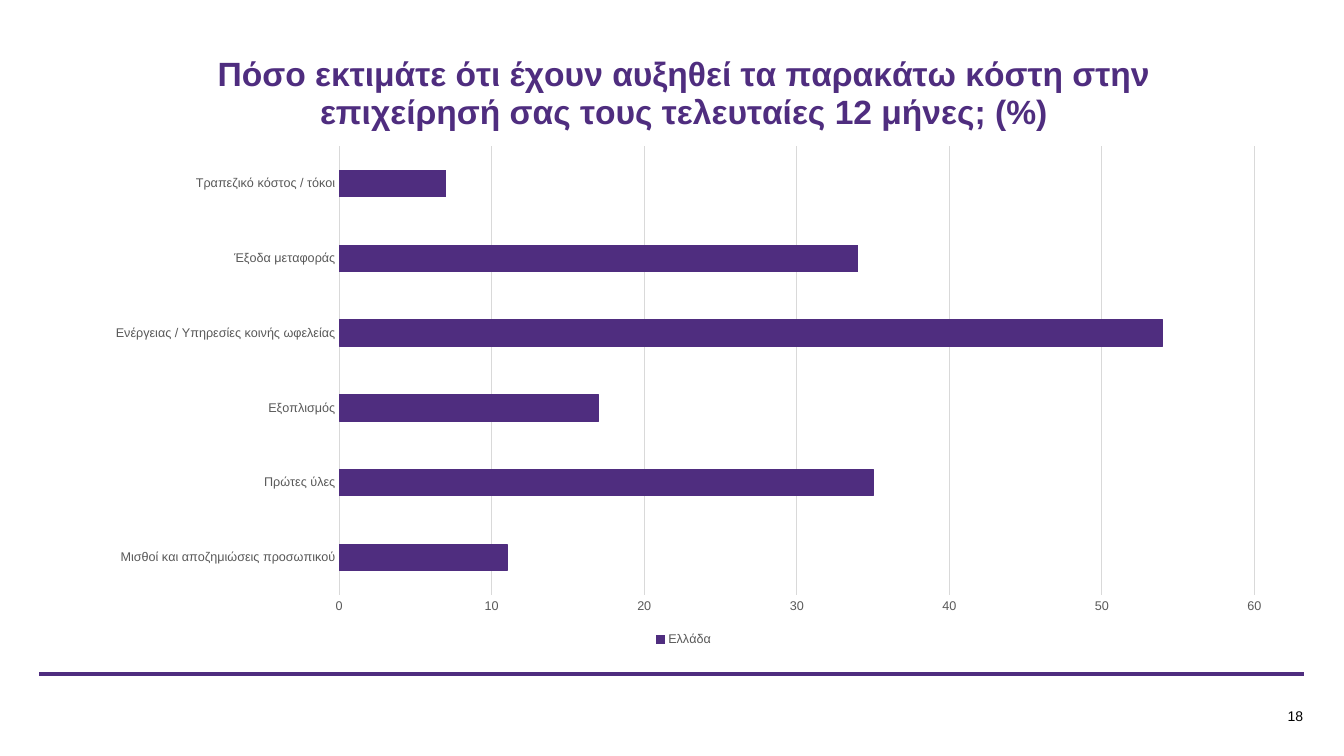
from typing import Any, NamedTuple

import lxml.etree
import pptx
import pptx.chart.data
import pptx.dml.color
import pptx.enum.chart
import pptx.enum.shapes
import pptx.enum.text
import pptx.oxml.ns
import pptx.util

Pt = pptx.util.Pt

COLORS = {
    "purple": "4F2D7F",
    "label": "595959",
    "grid": "D9D9D9",
    "black": "000000",
}
FONT_NAME = "Arial"
TITLE = (
    "Πόσο εκτιμάτε ότι έχουν αυξηθεί τα παρακάτω κόστη στην "
    "επιχείρησή σας τους τελευταίες 12 μήνες; (%)"
)
PLOT_LAYOUT = {"x": 0.21, "y": 0.19, "w": 0.77, "h": 0.72}


class Cost(NamedTuple):
    name: str
    increase: int


COSTS = [
    Cost("Μισθοί και αποζημιώσεις προσωπικού", 11),
    Cost("Πρώτες ύλες", 35),
    Cost("Εξοπλισμός", 17),
    Cost("Ενέργειας / Υπηρεσίες κοινής ωφελείας", 54),
    Cost("Έξοδα μεταφοράς", 34),
    Cost("Τραπεζικό κόστος / τόκοι", 7),
]


def rgb(color: str) -> pptx.dml.color.RGBColor:
    return pptx.dml.color.RGBColor.from_string(COLORS[color])


def set_attributes(target: Any, values: dict[str, Any]) -> None:
    for name, value in values.items():
        setattr(target, name, value)


def format_font(font: Any, size: float, color: str, bold: bool = False) -> None:
    set_attributes(font, {"name": FONT_NAME, "size": Pt(size), "bold": bold})
    font.color.rgb = rgb(color)


def format_line(line: Any, color: str, width: float) -> None:
    line.color.rgb = rgb(color)
    line.width = Pt(width)


def place_plot(chart: Any) -> None:
    """Fix the inner plot area as fractions of the chart frame."""
    qn = pptx.oxml.ns.qn
    plot_area = chart.plots[0]._element.getparent()
    for automatic in plot_area.findall(qn("c:layout")):
        plot_area.remove(automatic)
    layout = lxml.etree.Element(qn("c:layout"))
    manual = lxml.etree.SubElement(layout, qn("c:manualLayout"))
    settings = {"layoutTarget": "inner", "xMode": "edge", "yMode": "edge"} | PLOT_LAYOUT
    for tag, value in settings.items():
        lxml.etree.SubElement(manual, qn(f"c:{tag}")).set("val", str(value))
    plot_area.insert(0, layout)


def format_axes(chart: Any) -> None:
    no_tick = pptx.enum.chart.XL_TICK_MARK.NONE
    for axis in (chart.category_axis, chart.value_axis):
        set_attributes(axis, {"major_tick_mark": no_tick, "minor_tick_mark": no_tick})
        format_font(axis.tick_labels.font, 9, "label")
    chart.category_axis.has_major_gridlines = False
    format_line(chart.category_axis.format.line, "grid", 0.75)

    value_axis = chart.value_axis
    set_attributes(
        value_axis,
        {
            "minimum_scale": 0,
            "maximum_scale": 60,
            "major_unit": 10,
            "has_major_gridlines": True,
        },
    )
    set_attributes(
        value_axis.tick_labels,
        {"number_format": "###0", "number_format_is_linked": False},
    )
    format_line(value_axis.major_gridlines.format.line, "grid", 0.75)
    value_axis.format.line.fill.background()


def add_cost_chart(slide: Any) -> None:
    data = pptx.chart.data.CategoryChartData(number_format="###0")
    data.categories = [cost.name for cost in COSTS]
    data.add_series("Ελλάδα", [cost.increase for cost in COSTS])
    chart = slide.shapes.add_chart(
        pptx.enum.chart.XL_CHART_TYPE.BAR_CLUSTERED,
        Pt(64), Pt(20), Pt(849), Pt(445), data,
    ).chart
    format_font(chart.font, 10, "black")
    set_attributes(chart, {"has_title": True, "has_legend": True})

    title_frame = chart.chart_title.text_frame
    title_frame.text = TITLE
    format_font(title_frame.paragraphs[0].runs[0].font, 24, "purple", bold=True)
    chart.chart_title.include_in_layout = False

    set_attributes(
        chart.legend,
        {
            "position": pptx.enum.chart.XL_LEGEND_POSITION.BOTTOM,
            "include_in_layout": False,
        },
    )
    format_font(chart.legend.font, 9, "label")

    plot = chart.plots[0]
    set_attributes(plot, {"gap_width": 182, "vary_by_categories": False})
    series = plot.series[0]
    series.invert_if_negative = False
    series.format.fill.solid()
    series.format.fill.fore_color.rgb = rgb("purple")
    format_line(series.format.line, "purple", 0.75)
    format_axes(chart)
    place_plot(chart)


def add_footer_line(slide: Any) -> None:
    connector = slide.shapes.add_connector(
        pptx.enum.shapes.MSO_CONNECTOR.STRAIGHT,
        Pt(28), Pt(481.7), Pt(931.7), Pt(481.7),
    )
    format_line(connector.line, "purple", 3)
    properties = connector._element.spPr
    lxml.etree.SubElement(properties, pptx.oxml.ns.qn("a:effectLst"))


def add_page_number(slide: Any, number: int) -> None:
    box = slide.shapes.add_textbox(Pt(854.6), Pt(503.3), Pt(76.3), Pt(15.8))
    frame = box.text_frame
    margins = ("margin_left", "margin_top", "margin_right", "margin_bottom")
    set_attributes(frame, dict.fromkeys(margins, 0))
    set_attributes(
        frame,
        {
            "word_wrap": True,
            "vertical_anchor": pptx.enum.text.MSO_ANCHOR.MIDDLE,
            "text": str(number),
        },
    )
    paragraph = frame.paragraphs[0]
    paragraph.alignment = pptx.enum.text.PP_ALIGN.RIGHT
    format_font(paragraph.runs[0].font, 10, "black")


def main() -> None:
    presentation = pptx.Presentation()
    set_attributes(presentation, {"slide_width": Pt(960), "slide_height": Pt(540)})
    slide = presentation.slides.add_slide(presentation.slide_layouts[6])
    add_footer_line(slide)
    add_page_number(slide, 18)
    add_cost_chart(slide)
    presentation.save("out.pptx")


if __name__ == "__main__":
    main()
